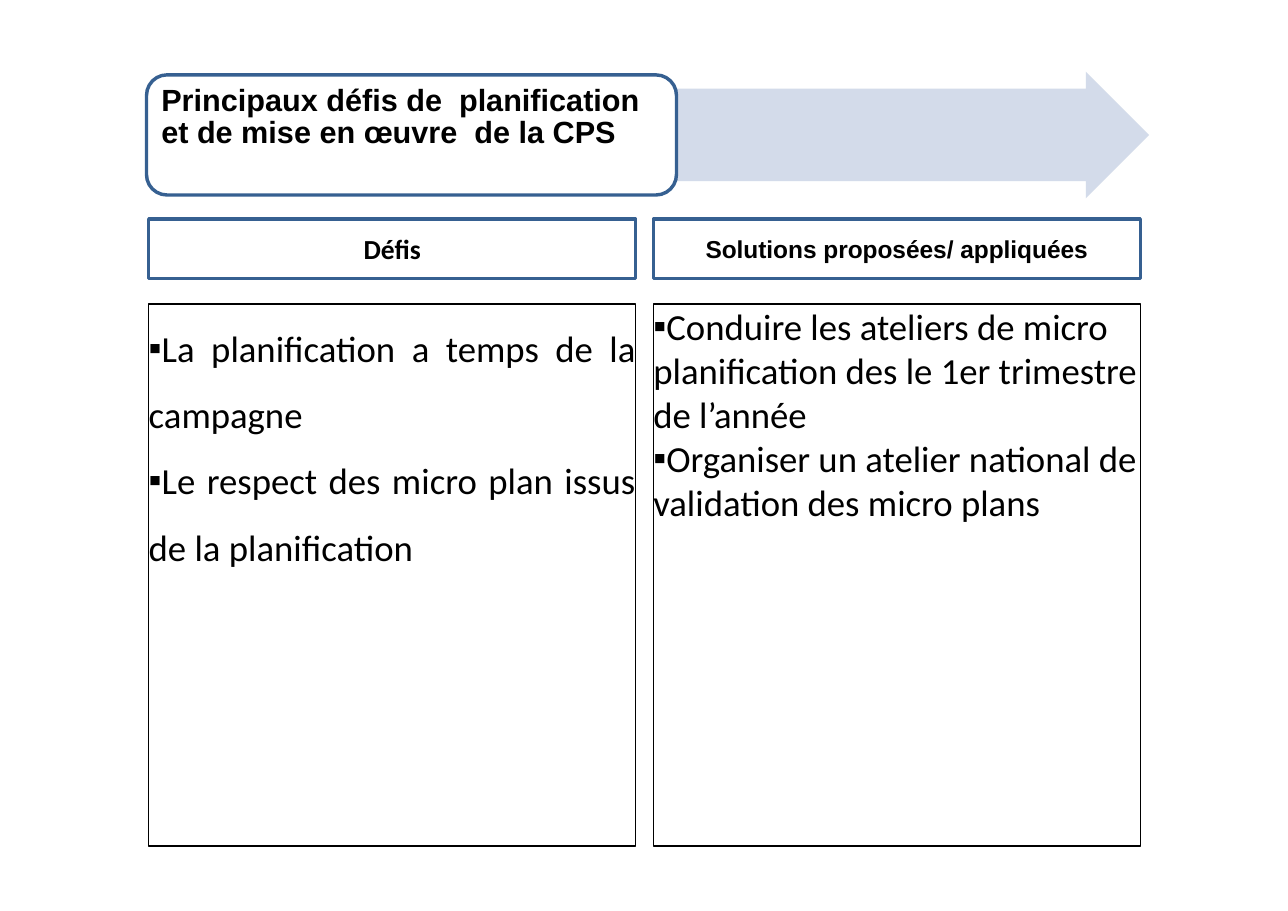
from lxml import etree
from pptx import Presentation
from pptx import util as u
from pptx.dml.color import RGBColor
from pptx.enum import shapes, text
from pptx.oxml.ns import qn

BLACK = RGBColor(0x00, 0x00, 0x00)
WHITE = RGBColor(0xFF, 0xFF, 0xFF)
BLUE = RGBColor(0x36, 0x60, 0x91)
PALE = RGBColor(0xCF, 0xD8, 0xE8)

SHAPE = shapes.MSO_SHAPE
ALIGN = text.PP_ALIGN
ANCHOR = text.MSO_ANCHOR

COLUMNS = [
    ("Défis", "Calibri", 18, ALIGN.JUSTIFY, 1.5,
     ["La planification a temps de la campagne",
      "Le respect des micro plan issus de la planification"]),
    ("Solutions proposées/ appliquées", "Arial", 16, ALIGN.LEFT, 1,
     ["Conduire les ateliers de micro planification des le 1er trimestre de l’année",
      "Organiser un atelier national de validation des micro plans"]),
]


def draw(slide, kind, box, fill=None, line=None, width=1):
    """Add a preset shape without shadow; box is left, top, width, height."""
    shape = slide.shapes.add_shape(kind, *map(u.Inches, box))
    shape.shadow.inherit = False
    if fill is None:
        shape.fill.background()
    else:
        shape.fill.solid()
        shape.fill.fore_color.rgb = fill
    if line is None:
        shape.line.fill.background()
    else:
        shape.line.color.rgb = line
        shape.line.width = u.Pt(width)
    return shape


def write(shape, lines, font="Calibri", size=24, bold=False, align=ALIGN.LEFT,
          anchor=ANCHOR.TOP, space=1, before=0, inset=(0, 0, 0, 0), bullet=None):
    """Fill a shape with paragraphs; inset is left, top, right, bottom."""
    frame = shape.text_frame
    frame.word_wrap = True
    frame.vertical_anchor = anchor
    (frame.margin_left, frame.margin_top,
     frame.margin_right, frame.margin_bottom) = map(u.Inches, inset)
    for i, line in enumerate(lines):
        para = frame.add_paragraph() if i else frame.paragraphs[0]
        para.alignment = align
        para.line_spacing = space
        para.space_before = u.Pt(before)
        run = para.add_run()
        run.text = line
        run.font.name = font
        run.font.size = u.Pt(size)
        run.font.bold = bold
        run.font.color.rgb = BLACK
        if bullet:
            props = para._p.get_or_add_pPr()
            etree.SubElement(props, qn("a:buFont"), typeface="Arial")
            etree.SubElement(props, qn("a:buChar"), char=bullet)


def banner(slide, box):
    """Title plate with an arrow running out to the right."""
    left, top, width, height = box
    plate = 4.81
    arrow = draw(slide, SHAPE.RIGHT_ARROW,
                 (left + plate - 0.03, top, width - plate + 0.03, height), PALE)
    arrow.adjustments[0] = 0.73
    arrow.adjustments[1] = 0.5
    tint = arrow.fill._xPr.find(".//" + qn("a:srgbClr"))
    etree.SubElement(tint, qn("a:alpha"), val="90000")
    title = draw(slide, SHAPE.ROUNDED_RECTANGLE,
                 (left, top + 0.03, plate, height - 0.06), WHITE, BLUE, 2.25)
    title.adjustments[0] = 0.17
    write(title, ["Principaux défis de  planification et de mise en œuvre  de la CPS"],
          font="Arial", size=20, bold=True, space=0.86, before=4.3,
          inset=(0.08, 0.05, 0.2, 0))


def column(slide, box, head, font, size, align, space, points):
    """Header strip above a framed bullet list."""
    left, top, width, height = box
    strip, gap = 0.54, 0.23
    title = draw(slide, SHAPE.RECTANGLE, (left, top, width, strip),
                 line=BLUE, width=2.25)
    write(title, [head], font=font, size=size, bold=True,
          align=ALIGN.CENTER, anchor=ANCHOR.MIDDLE)
    drop = strip + gap
    body = draw(slide, SHAPE.RECTANGLE, (left, top + drop, width, height - drop),
                line=BLACK, width=0.75)
    write(body, points, align=align, space=space, bullet="▪")


def main():
    deck = Presentation()
    deck.slide_width = u.Inches(11.69)
    deck.slide_height = u.Inches(8.27)
    slide = deck.slides.add_slide(deck.slide_layouts[6])
    banner(slide, (1.33, 0.65, 9.1, 1.15))
    for i, part in enumerate(COLUMNS):
        column(slide, (1.35 + i * 4.58, 1.99, 4.42, 5.69), *part)
    deck.save("out.pptx")


if __name__ == "__main__":
    main()
